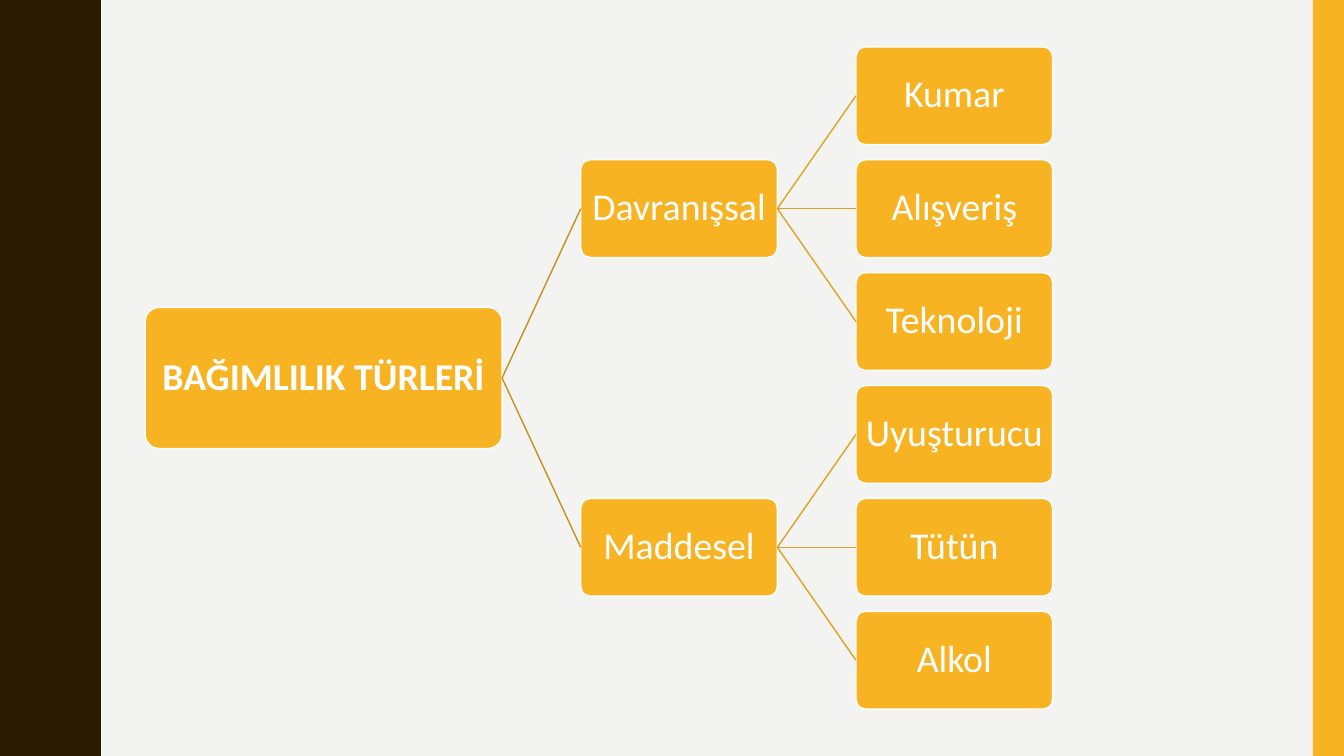
from lxml import etree
from pptx import Presentation
from pptx.dml.color import RGBColor
from pptx.enum.shapes import MSO_CONNECTOR, MSO_SHAPE
from pptx.enum.text import MSO_ANCHOR, PP_ALIGN
from pptx.oxml.ns import qn
from pptx.util import Inches, Pt

STRAIGHT = MSO_CONNECTOR.STRAIGHT
RECTANGLE = MSO_SHAPE.RECTANGLE
ROUNDED = MSO_SHAPE.ROUNDED_RECTANGLE
CENTER = PP_ALIGN.CENTER
MIDDLE = MSO_ANCHOR.MIDDLE
RIGHT_SIDE, LEFT_SIDE = 3, 1

COLORS = {
    "background": "F3F3F2",
    "wave": "2A1A00",
    "amber": "F8B323",
    "white": "FFFFFF",
    "root_link": "C78F1C",
    "leaf_link": "E1A220",
}
FONT = "Calibri"
SLIDE_WIDTH, SLIDE_HEIGHT = 13.33, 7.5
MIDDLE_Y = SLIDE_HEIGHT / 2
ROW_PITCH = 1.12
BRANCH_LEFT, LEAF_LEFT = 5.76, 8.49

BRANCHES = {
    "Davranışsal": ["Kumar", "Alışveriş", "Teknoloji"],
    "Maddesel": ["Uyuşturucu", "Tütün", "Alkol"],
}

WAVE_PERIOD = 1.5
HALF_WAVE = [
    (0.78, 0), (0.78, 0.07), (0.79, 0.14), (0.8, 0.2), (0.81, 0.25),
    (0.83, 0.29), (0.85, 0.33), (0.87, 0.38), (0.89, 0.42), (0.91, 0.46),
    (0.93, 0.5), (0.95, 0.55), (0.96, 0.61), (0.97, 0.68), (0.97, 0.75),
]

presentation = Presentation()
presentation.slide_width = Inches(SLIDE_WIDTH)
presentation.slide_height = Inches(SLIDE_HEIGHT)
slide = presentation.slides.add_slide(presentation.slide_layouts[6])
slide.background.fill.solid()
slide.background.fill.fore_color.rgb = RGBColor.from_string(COLORS["background"])


def add_node(text, left, center_y, width=1.95, height=0.97, size=27, bold=False):
    shape = slide.shapes.add_shape(
        ROUNDED, Inches(left), Inches(center_y - height / 2), Inches(width), Inches(height)
    )
    shape.adjustments[0] = 0.1
    shape.shadow.inherit = False
    shape.fill.solid()
    shape.fill.fore_color.rgb = RGBColor.from_string(COLORS["amber"])
    shape.line.color.rgb = RGBColor.from_string(COLORS["white"])
    shape.line.width = Pt(1)
    frame = shape.text_frame
    frame.word_wrap = True
    frame.vertical_anchor = MIDDLE
    frame.margin_left = frame.margin_right = Inches(0.04)
    frame.margin_top = frame.margin_bottom = Inches(0.04)
    paragraph = frame.paragraphs[0]
    paragraph.alignment = CENTER
    paragraph.line_spacing = 0.9
    run = paragraph.add_run()
    run.text = text
    run.font.name = FONT
    run.font.size = Pt(size)
    run.font.bold = bold
    run.font.color.rgb = RGBColor.from_string(COLORS["white"])
    return shape


def link_nodes(parent, child, color):
    connector = slide.shapes.add_connector(STRAIGHT, 0, 0, 0, 0)
    connector.begin_connect(parent, RIGHT_SIDE)
    connector.end_connect(child, LEFT_SIDE)
    connector.line.color.rgb = RGBColor.from_string(color)
    connector.line.width = Pt(1)
    etree.SubElement(connector._element.spPr, qn("a:effectLst"))


falling_half = [(x, WAVE_PERIOD - y) for x, y in reversed(HALF_WAVE[:-1])]
wave_points = [
    (x, y + period * WAVE_PERIOD)
    for period in range(5)
    for x, y in HALF_WAVE + falling_half
]
builder = slide.shapes.build_freeform(0, 0, scale=Inches(1))
builder.add_line_segments(wave_points + [(0, SLIDE_HEIGHT)], close=True)
wave = builder.convert_to_shape()
right_bar = slide.shapes.add_shape(
    RECTANGLE, Inches(13.02), 0, Inches(0.31), Inches(SLIDE_HEIGHT)
)
for shape, color in ((wave, COLORS["wave"]), (right_bar, COLORS["amber"])):
    shape.shadow.inherit = False
    shape.fill.solid()
    shape.fill.fore_color.rgb = RGBColor.from_string(color)
    shape.line.fill.background()

root = add_node("BAĞIMLILIK TÜRLERİ", 1.44, MIDDLE_Y, width=3.54, height=1.4, bold=True)
for branch_index, (branch_name, leaf_names) in enumerate(BRANCHES.items()):
    branch_y = MIDDLE_Y + (branch_index - 0.5) * 3 * ROW_PITCH
    branch = add_node(branch_name, BRANCH_LEFT, branch_y)
    link_nodes(root, branch, COLORS["root_link"])
    for leaf_index, leaf_name in enumerate(leaf_names):
        leaf = add_node(leaf_name, LEAF_LEFT, branch_y + (leaf_index - 1) * ROW_PITCH)
        link_nodes(branch, leaf, COLORS["leaf_link"])

presentation.save("out.pptx")
